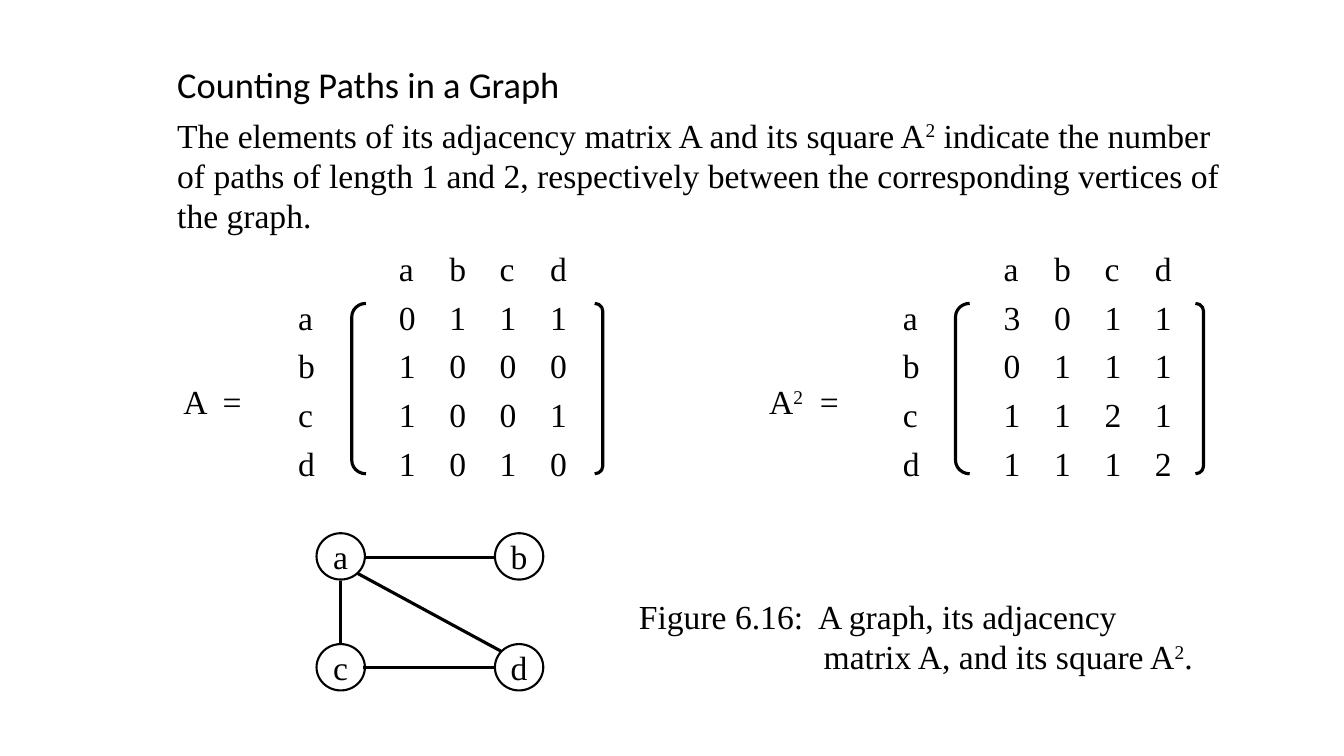
"""Build a slide on counting paths in a graph with its adjacency matrices."""
from lxml import etree
from pptx import Presentation
from pptx.dml.color import RGBColor
from pptx.enum import shapes, text
from pptx.oxml.ns import qn
from pptx.util import Pt

BLACK = RGBColor(0, 0, 0)
WHITE = RGBColor(255, 255, 255)
SERIF, SANS = "Times New Roman", "Calibri"

HEADING = "Counting Paths in a Graph"
STATEMENT = ("The elements of its adjacency matrix A and its square A^2^ indicate the number "
             "of paths of length 1 and 2, respectively between the corresponding vertices of the graph.")
CAPTION = ["Figure 6.16:  A graph, its adjacency", "matrix A, and its square A^2^."]
VERTICES = "abcd"
ADJACENCY = ["0111", "1000", "1001", "1010"]
SQUARE = ["3011", "0111", "1121", "1112"]
MATRIX_NAMES = [("A  =", 105.84, 77.04), ("A^2^  =", 524.16, 94.32)]
BRACKETS = [
    (shapes.MSO_SHAPE.LEFT_BRACKET, 10.08, (251.28, 682.56)),
    (shapes.MSO_SHAPE.RIGHT_BRACKET, 5.76, (424.8, 853.92)),
]
EDGES = [
    ((260.64, 398.16), (353.52, 398.16)),
    ((259.2, 476.64), (352.8, 476.64)),
    ((243.36, 414.72), (243.36, 460.08)),
    ((255.6, 409.68), (357.84, 465.12)),
]
NODE_LEFT, NODE_TOP, NODE_GAP_X, NODE_GAP_Y = 226.08, 380.88, 127.44, 79.2
COLUMN_START, COLUMN_STEP, MATRIX_STEP = 72, 36, 432

deck = Presentation()
deck.slide_width, deck.slide_height = Pt(960), Pt(540)
slide = deck.slides.add_slide(deck.slide_layouts[6])


def write(frame, content, size=24, font=SERIF, align=text.PP_ALIGN.LEFT,
          after=0, indent=0, tabs=()):
    """Add a paragraph to the frame; text between carets is superscript."""
    first = frame.paragraphs[0]
    paragraph = frame.add_paragraph() if first.runs else first
    paragraph.alignment = align
    paragraph.space_after = Pt(after)
    properties = paragraph._p.get_or_add_pPr()
    if indent:
        properties.set("marL", str(Pt(indent)))
    if tabs:
        stops = etree.SubElement(properties, qn("a:tabLst"))
        for stop in tabs:
            etree.SubElement(stops, qn("a:tab"), pos=str(Pt(stop)), algn="l")
    for index, piece in enumerate(content.split("^")):
        run = paragraph.add_run()
        run.text = piece
        run.font.size, run.font.name = Pt(size), font
        run.font.color.rgb = BLACK
        if index % 2:
            run._r.get_or_add_rPr().set("baseline", "30000")


def text_box(left, top, width, height):
    frame = slide.shapes.add_textbox(Pt(left), Pt(top), Pt(width), Pt(height)).text_frame
    frame.word_wrap = True
    return frame


def outline(kind, left, top, width, height, line=BLACK, weight=2.25, fill=None):
    shape = slide.shapes.add_shape(kind, Pt(left), Pt(top), Pt(width), Pt(height))
    shape.shadow.inherit = False
    shape.line.color.rgb, shape.line.width = line, Pt(weight)
    if fill is None:
        shape.fill.background()
    else:
        shape.fill.solid()
        shape.fill.fore_color.rgb = fill
    return shape


for index, vertex in enumerate(VERTICES):
    row, column = divmod(index, 2)
    node = outline(shapes.MSO_SHAPE.OVAL, NODE_LEFT + column * NODE_GAP_X,
                   NODE_TOP + row * NODE_GAP_Y, 34.56, 33.12, weight=1.5, fill=WHITE)
    frame = node.text_frame
    frame.margin_left = frame.margin_right = frame.margin_top = frame.margin_bottom = 0
    frame.vertical_anchor = text.MSO_ANCHOR.MIDDLE
    write(frame, vertex, align=text.PP_ALIGN.CENTER, after=8)

for start, end in EDGES:
    edge = slide.shapes.add_connector(shapes.MSO_CONNECTOR.STRAIGHT, *map(Pt, start + end))
    edge.line.color.rgb, edge.line.width = BLACK, Pt(2.25)
    etree.SubElement(edge._element.spPr, qn("a:effectLst"))

columns = [COLUMN_START + COLUMN_STEP * i for i in range(len(VERTICES))]
stops = columns + [MATRIX_STEP] + [MATRIX_STEP + column for column in columns]
matrices = text_box(205.92, 173.52, 689.04, 177.12)
rows = [("", VERTICES, VERTICES), *zip(VERTICES, ADJACENCY, SQUARE)]
for label, adjacency, square in rows:
    write(matrices, "\t".join([label, *adjacency, label, *square]), after=6, tabs=stops)

for name, left, width in MATRIX_NAMES:
    label = outline(shapes.MSO_SHAPE.RECTANGLE, left, 268.56, width, 30.96,
                    line=WHITE, weight=0.75, fill=WHITE).text_frame
    label.vertical_anchor = text.MSO_ANCHOR.TOP
    label.margin_left, label.margin_right = Pt(25.2), 0
    write(label, name, after=8)

for kind, width, lefts in BRACKETS:
    for left in lefts:
        outline(kind, left, 216.72, width, 121.68).adjustments[0] = 0.95

statement = text_box(119.52, 41.04, 761.04, 131.76)
write(statement, HEADING, size=26, font=SANS, after=6)
write(statement, STATEMENT, after=6)

caption = text_box(449.28, 421.92, 426.24, 65.52)
for line, indent in zip(CAPTION, (0, 132)):
    write(caption, line, indent=indent)

deck.save("out.pptx")
